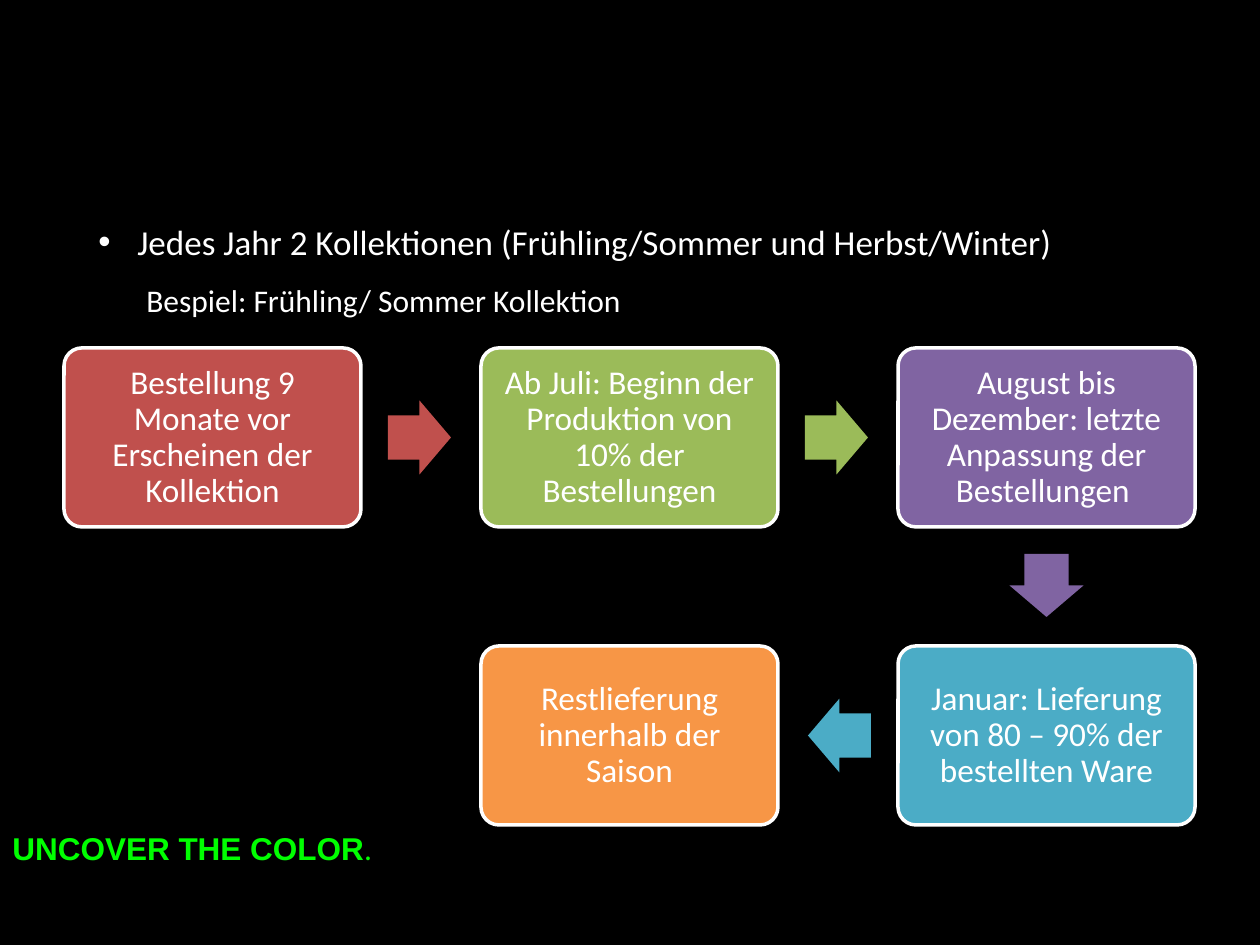
from lxml.etree import SubElement
from pptx import Presentation
from pptx.dml.color import RGBColor
from pptx.enum.shapes import MSO_SHAPE as Shape
from pptx.enum.text import MSO_ANCHOR as Anchor, MSO_AUTO_SIZE as AutoSize, PP_ALIGN as Align
from pptx.oxml.ns import qn
from pptx.util import Emu, Pt

WIDTH, HEIGHT = 1260, 945
WHITE = "FFFFFF"
LEFT, TOP = 64, 348
BOX_WIDTH, BOX_HEIGHT = 297, 179
COLUMN_STEP, ROW_STEP = 417, 298
ARROW_LENGTH, ARROW_SPAN, ARROW_GAP = 63, 74, 27

# text, colour, column, row
STEPS = [
    ("Bestellung 9 Monate vor Erscheinen der Kollektion", "C0504D", 0, 0),
    ("Ab Juli: Beginn der Produktion von 10% der Bestellungen", "9BBB59", 1, 0),
    ("August bis Dezember: letzte Anpassung der Bestellungen ", "8064A2", 2, 0),
    ("Januar: Lieferung von 80 – 90% der bestellten Ware", "4BACC6", 2, 1),
    ("Restlieferung innerhalb der Saison", "F79646", 1, 1),
]
ROTATIONS = {(1, 0): 0, (0, 1): 90, (-1, 0): 180}

# left, top, width, height, bulleted, runs of (text, size, font, colour, bold)
TEXTS = [
    (0, 823, 408, 50, False, [("UNCOVER THE COLOR", 18, "Arial", "00FF00", True),
                              (".", 18, "Calibri", "00FF00", False)]),
    (86, 214, 1134, 55, True,
     [("Jedes Jahr 2 Kollektionen (Frühling/Sommer und Herbst/Winter)", 20, "Calibri", WHITE, False)]),
    (134, 275, 615, 50, False,
     [("Bespiel: Frühling/ Sommer Kollektion", 18, "Calibri", WHITE, False)]),
]


def px(value):
    return Emu(round(value * 914400 / 126))


def color(value):
    return RGBColor.from_string(value)


def add_run(paragraph, text, size, font, fill, bold=False):
    run = paragraph.add_run()
    run.text = text
    run.font.size, run.font.name, run.font.bold = Pt(size), font, bold
    run.font.color.rgb = color(fill)


def add_bullet(paragraph):
    properties = paragraph._p.get_or_add_pPr()
    properties.set("marL", str(px(39)))
    properties.set("indent", str(-px(39)))
    SubElement(properties, qn("a:buFont")).set("typeface", "Arial")
    SubElement(properties, qn("a:buChar")).set("char", "•")


def add_filled(slide, kind, place, fill, adjustments):
    shape = slide.shapes.add_shape(kind, *map(px, place))
    shape.shadow.inherit = False
    shape.fill.solid()
    shape.fill.fore_color.rgb = color(fill)
    shape.line.fill.background()
    for index, value in enumerate(adjustments):
        shape.adjustments[index] = value
    return shape


def add_step(slide, text, fill, column, row):
    place = (LEFT + column * COLUMN_STEP, TOP + row * ROW_STEP, BOX_WIDTH, BOX_HEIGHT)
    box = add_filled(slide, Shape.ROUNDED_RECTANGLE, place, fill, [0.1])
    box.line.color.rgb = color(WHITE)
    box.line.width = Pt(2)
    frame = box.text_frame
    frame.word_wrap = True
    frame.vertical_anchor = Anchor.MIDDLE
    frame.margin_left = frame.margin_right = frame.margin_top = frame.margin_bottom = px(10)
    paragraph = frame.paragraphs[0]
    paragraph.alignment = Align.CENTER
    paragraph.line_spacing = 0.9
    add_run(paragraph, text, 19, "Calibri", WHITE)


def add_arrow(slide, source, target):
    _, fill, column, row = source
    across, down = target[2] - column, target[3] - row
    reach = ARROW_GAP + ARROW_LENGTH / 2
    center_x = LEFT + column * COLUMN_STEP + BOX_WIDTH / 2 + across * (BOX_WIDTH / 2 + reach)
    center_y = TOP + row * ROW_STEP + BOX_HEIGHT / 2 + down * (BOX_HEIGHT / 2 + reach)
    place = (center_x - ARROW_LENGTH / 2, center_y - ARROW_SPAN / 2, ARROW_LENGTH, ARROW_SPAN)
    arrow = add_filled(slide, Shape.RIGHT_ARROW, place, fill, [0.6, 0.5])
    arrow.rotation = ROTATIONS[across, down]


def add_text(slide, left, top, width, height, bulleted, runs):
    frame = slide.shapes.add_textbox(*map(px, (left, top, width, height))).text_frame
    frame.word_wrap = True
    frame.auto_size = AutoSize.SHAPE_TO_FIT_TEXT
    paragraph = frame.paragraphs[0]
    if bulleted:
        add_bullet(paragraph)
    for run in runs:
        add_run(paragraph, *run)


def main():
    """Build the slide on the order cycle of a fashion collection."""
    presentation = Presentation()
    presentation.slide_width, presentation.slide_height = px(WIDTH), px(HEIGHT)
    slide = presentation.slides.add_slide(presentation.slide_layouts[6])
    slide.background.fill.solid()
    slide.background.fill.fore_color.rgb = color("000000")
    for step in STEPS:
        add_step(slide, *step)
    for source, target in zip(STEPS, STEPS[1:]):
        add_arrow(slide, source, target)
    for text in TEXTS:
        add_text(slide, *text)
    presentation.save("out.pptx")


if __name__ == "__main__":
    main()
